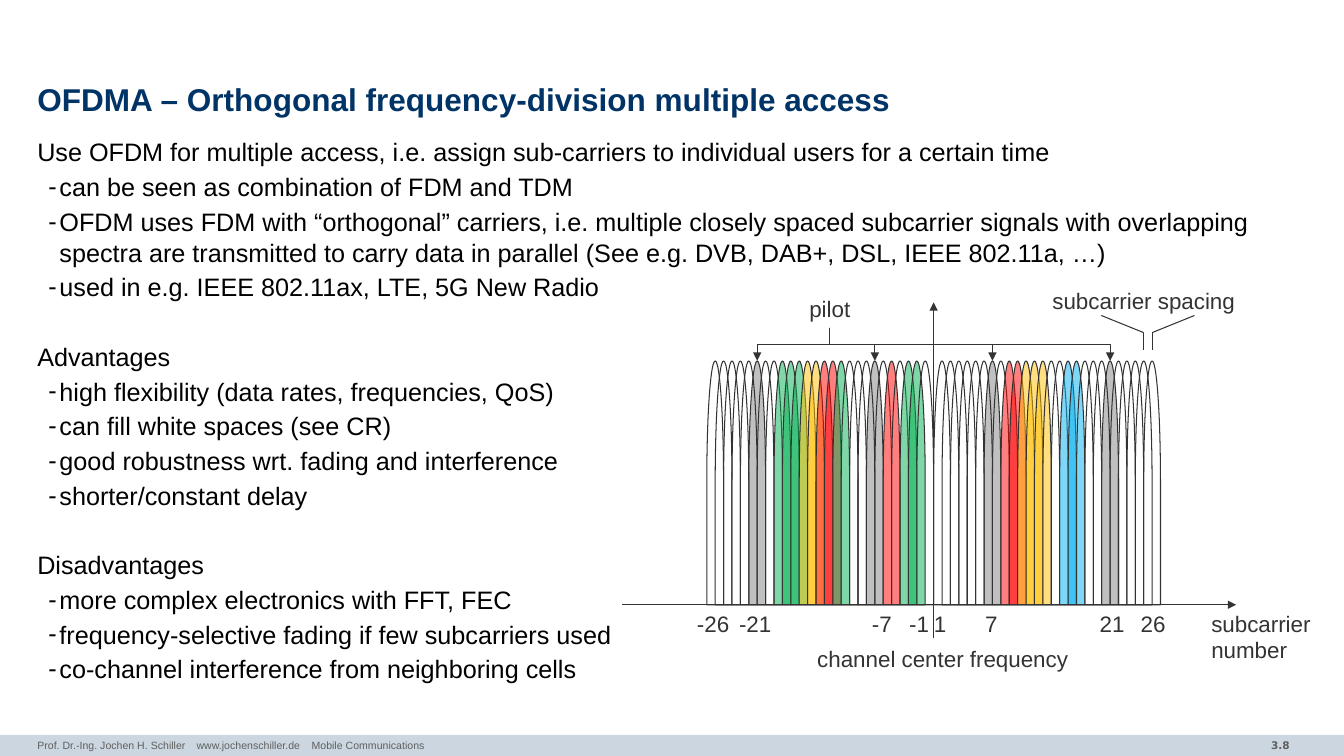
from dataclasses import dataclass

from lxml import etree
from pptx import Presentation
from pptx.dml.color import RGBColor
from pptx.enum.shapes import MSO_CONNECTOR as CONN, MSO_SHAPE as SHAPE
from pptx.enum.text import MSO_ANCHOR as ANCHOR, PP_ALIGN as ALIGN
from pptx.oxml.ns import qn
from pptx.util import Inches, Pt


@dataclass(frozen=True)
class Theme:
    font: str = "Arial"
    number_font: str = "DejaVu Sans"
    navy: str = "003366"
    black: str = "000000"
    ink: str = "333333"
    muted: str = "5F5F5F"
    bar: str = "CCD6E0"
    pilot: str = "C0C0C0"
    green: str = "00B050"
    yellow: str = "FFC000"
    red: str = "FF0000"
    blue: str = "00B0F0"
    title_pt: float = 22.5
    body_pt: float = 18
    label_pt: float = 16
    small_pt: float = 7.5
    line_pt: float = 0.75


T = Theme()

BODY = [
    ("Use OFDM for multiple access, i.e. assign sub-carriers to individual users for a certain time", [
        "can be seen as combination of FDM and TDM",
        "OFDM uses FDM with “orthogonal” carriers, i.e. multiple closely spaced subcarrier signals with "
        "overlapping spectra are transmitted to carry data in parallel "
        "(See e.g. DVB, DAB+, DSL, IEEE 802.11a, …)",
        "used in e.g. IEEE 802.11ax, LTE, 5G New Radio"]),
    ("Advantages", [
        "high flexibility (data rates, frequencies, QoS)",
        "can fill white spaces (see CR)",
        "good robustness wrt. fading and interference",
        "shorter/constant delay"]),
    ("Disadvantages", [
        "more complex electronics with FFT, FEC",
        "frequency-selective fading if few subcarriers used",
        "co-channel interference from neighboring cells"]),
]
FOOTER = ["Prof. Dr.-Ing. Jochen H. Schiller", "www.jochenschiller.de", "Mobile Communications"]

PILOTS = (-21, -7, 7, 21)
USERS = {T.green: (-18, -17, -16, -11, -3, -2), T.yellow: (-15, -14, 11, 12, 13),
         T.red: (-13, -12, -5, 9, 10), T.blue: (16, 17)}
USER_COLOR = {k: color for color, carriers in USERS.items() for k in carriers}
# Axis numbers, with the sideways nudge of each in inches
AXIS_NUMBERS = {-26: -0.02, -21: -0.02, -7: 0.07, -1: -0.06, 1: -0.02, 7: -0.01, 21: 0.02, 26: 0.01}


def style(p, size, color, font=T.font, bold=False):
    p.font.name, p.font.size, p.font.bold = font, Pt(size), bold
    p.font.color.rgb = RGBColor.from_string(color)


def add_text(s, box, text, size, color, align=ALIGN.LEFT, wrap=False, **font):
    tf = s.shapes.add_textbox(*map(Inches, box)).text_frame
    tf.word_wrap = wrap
    tf.text = text
    for p in tf.paragraphs:
        p.alignment = align
        style(p, size, color, **font)
    return tf


def add_ppr(p, tag, **attrs):
    el = etree.Element(qn(tag), **attrs)
    p._p.get_or_add_pPr().insert_element_before(el, "a:defRPr", "a:extLst")
    return el


def add_line(s, start, end, arrow=False, kind=CONN.STRAIGHT):
    c = s.shapes.add_connector(kind, *map(Inches, (*start, *end)))
    c.line.color.rgb = RGBColor.from_string(T.ink)
    c.line.width = Pt(T.line_pt)
    if arrow:
        etree.SubElement(c.line._get_or_add_ln(), qn("a:tailEnd"), type="triangle")
    etree.SubElement(c._element.spPr, qn("a:effectLst"))
    return c


def add_drop_arrow(s, start, end):
    """Elbow arrow that leaves and arrives vertically: a turned connector."""
    (x1, y1), (x2, y2) = start, end
    cx, cy = (x1 + x2) / 2, (y1 + y2) / 2
    side = 1 if x2 > x1 else -1
    dx, dy = side * (y2 - y1) / 2, abs(x2 - x1) / 2
    c = add_line(s, (cx + dx, cy - dy), (cx - dx, cy + dy), True, CONN.ELBOW)
    c._element.spPr.find(qn("a:xfrm")).set("rot", str((270 if side > 0 else 90) * 60000))


def add_carrier(s, cx, top, bottom, width, color=None, alpha=100):
    height = bottom - top
    sp = s.shapes.add_shape(SHAPE.FLOWCHART_DELAY, Inches(cx - height / 2),
                            Inches((top + bottom - width) / 2), Inches(height), Inches(width))
    sp.rotation = 270
    sp.shadow.inherit = False
    sp.line.color.rgb = RGBColor.from_string(T.ink)
    sp.line.width = Pt(T.line_pt)
    if color is None:
        sp.fill.background()
        return
    sp.fill.solid()
    sp.fill.fore_color.rgb = RGBColor.from_string(color)
    if alpha < 100:
        clr = sp._element.spPr.find(qn("a:solidFill"))[0]
        etree.SubElement(clr, qn("a:alpha"), val=str(alpha * 1000))


def add_title(s, box, text):
    title = s.shapes.title
    title.left, title.top, title.width, title.height = map(Inches, box)
    tf = title.text_frame
    tf.text = text
    tf.margin_left = tf.margin_right = tf.margin_top = tf.margin_bottom = 0
    tf.vertical_anchor = ANCHOR.MIDDLE
    p = tf.paragraphs[0]
    p.alignment, p.line_spacing = ALIGN.LEFT, 0.85
    style(p, T.title_pt, T.navy, bold=True)


def add_body(s, box):
    lines = [(text, i > 0) for head, items in BODY for i, text in enumerate([head, *items])]
    tf = add_text(s, box, "\n".join(text for text, _ in lines), T.body_pt, T.black, wrap=True)
    tf.margin_left = tf.margin_right = tf.margin_top = tf.margin_bottom = 0
    for i, (p, (_, bulleted)) in enumerate(zip(tf.paragraphs, lines)):
        p.line_spacing = 1.02
        p.space_before = Pt(2.8 if bulleted else 27.5 if i else 0)
        if bulleted:
            pPr = p._p.get_or_add_pPr()
            pPr.set("marL", str(Inches(0.22)))
            pPr.set("indent", str(Inches(-0.11)))
            add_ppr(p, "a:buFont", typeface=T.font)
            add_ppr(p, "a:buChar", char="-")


def add_spectrum(s, box):
    left, top, width, height = box
    center, step = left + 3.09, 1 / 12
    axis_y, peak_y = top + 3.2, top + 0.78

    def carrier_x(k):
        return center + k * step

    def label(text, cx, y, w=1.0, h=0.37, align=ALIGN.CENTER):
        add_text(s, (cx - w / 2, y, w, h), text, T.label_pt, T.ink, align)

    # Pilots behind, then the user and free carriers
    for k in PILOTS:
        add_carrier(s, carrier_x(k), peak_y, axis_y, 2 * step, T.pilot)
    for k in range(-26, 27):
        if k and k not in PILOTS:
            add_carrier(s, carrier_x(k), peak_y, axis_y, 2 * step, USER_COLOR.get(k), 50)

    # Axes and their labels
    add_line(s, (left, axis_y), (left + width, axis_y), arrow=True)
    add_line(s, (center, top + height), (center, top + 0.2), arrow=True)
    for k, nudge in AXIS_NUMBERS.items():
        label(str(k), carrier_x(k) + nudge, axis_y, 0.8)
    label("subcarrier\nnumber", left + width + 0.25, axis_y, 1.19, 0.64, ALIGN.LEFT)
    label("channel center frequency", center + 0.09, axis_y + 0.35, 2.9)

    # Pilot marker
    pilot_x = left + 2.06
    label("pilot", pilot_x, top + 0.08)
    for k in PILOTS:
        add_drop_arrow(s, (pilot_x, top + 0.45), (carrier_x(k), peak_y))

    # Spacing marker between the last two carriers
    label("subcarrier spacing", carrier_x(25), top, 2.2)
    for k, side in ((25, -1), (26, 1)):
        x, y = carrier_x(k), top + 0.5
        add_line(s, (x, y), (x, y + 0.17))
        add_line(s, (x, y), (x + side * 0.42, y - 0.17))


def add_footer(s, box):
    left, top, width, height = box
    bar = s.shapes.add_shape(SHAPE.RECTANGLE, *map(Inches, box))
    bar.shadow.inherit = False
    bar.fill.solid()
    bar.fill.fore_color.rgb = RGBColor.from_string(T.bar)
    bar.line.fill.background()
    tf = add_text(s, (left + 0.37, top - 0.01, 8.72, 0.22), "\t".join(FOOTER),
                  T.small_pt, T.muted, wrap=True)
    tf.margin_left = tf.margin_right = 0
    tabs = add_ppr(tf.paragraphs[0], "a:tabLst")
    for pos in (1.58, 2.72):
        etree.SubElement(tabs, qn("a:tab"), pos=str(Inches(pos)), algn="l")
    add_text(s, (left + width - 2.23, top - 0.01, 1.79, 0.23), "3.8", T.small_pt, T.muted,
             ALIGN.RIGHT, wrap=True, font=T.number_font, bold=True)


def main():
    prs = Presentation()
    prs.slide_width, prs.slide_height = Inches(13.33), Inches(7.5)
    s = prs.slides.add_slide(prs.slide_layouts[5])
    add_footer(s, (0, 7.29, 13.33, 0.21))
    add_title(s, (0.37, 0.78, 12.6, 0.47), "OFDMA – Orthogonal frequency-division multiple access")
    add_body(s, (0.37, 1.35, 12.6, 5.74))
    add_spectrum(s, (6.17, 2.8, 6.09, 3.53))
    prs.save("out.pptx")


if __name__ == "__main__":
    main()
